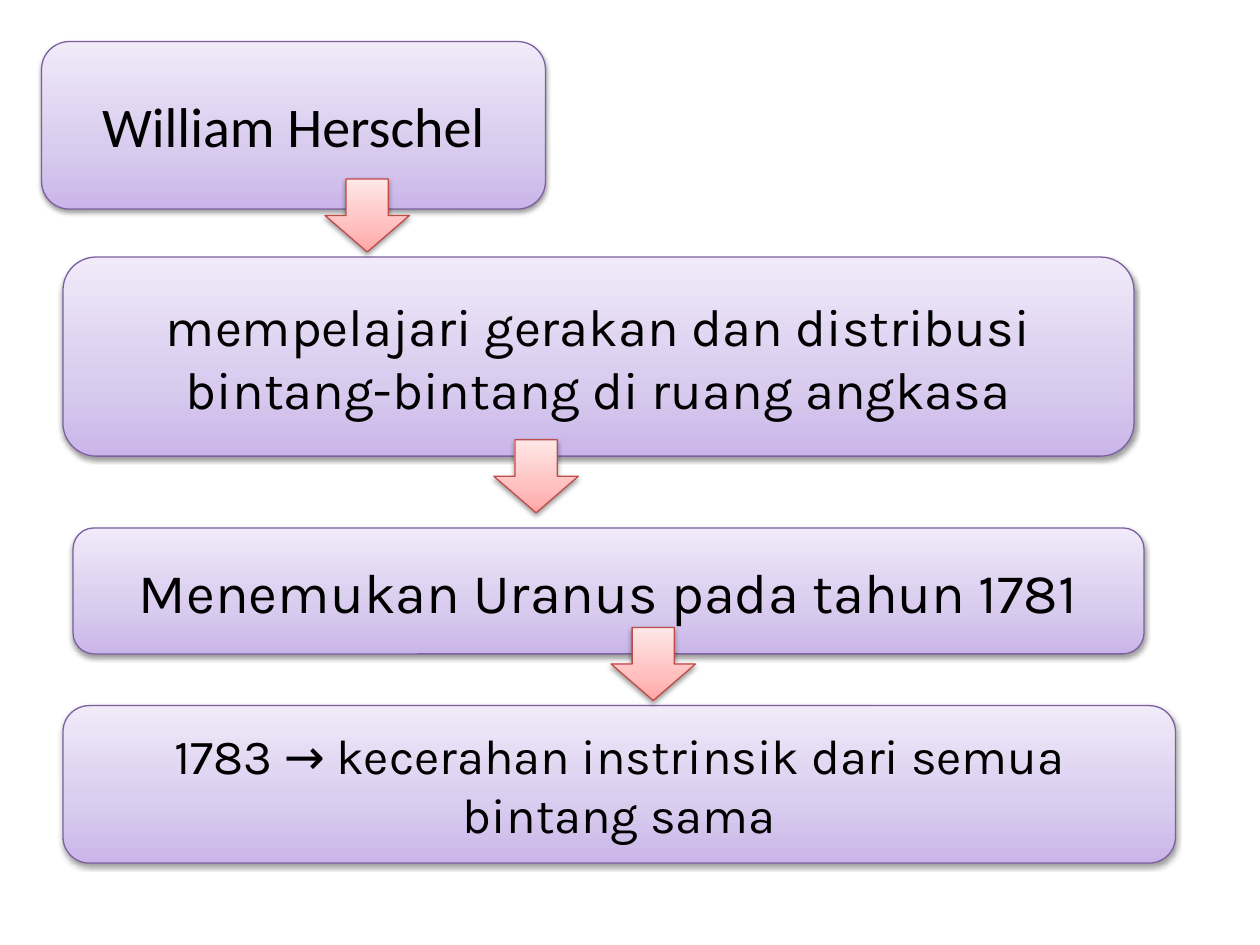
from copy import deepcopy

from lxml import etree
from pptx import Presentation
from pptx.dml.color import RGBColor
from pptx.enum.shapes import MSO_SHAPE
from pptx.enum.text import MSO_ANCHOR, PP_ALIGN
from pptx.oxml.ns import qn
from pptx.util import Inches, Pt

ROUND, ARROW = MSO_SHAPE.ROUNDED_RECTANGLE, MSO_SHAPE.DOWN_ARROW
MIDDLE, CENTER = MSO_ANCHOR.MIDDLE, PP_ALIGN.CENTER
STOPS = (0, 0.35, 1)
PURPLE = {"fill": ("C9B5E8", "D8CBEE", "F0EAF9"), "line": "7D60A0"}
RED = {"fill": ("FFA6A5", "FFC0BF", "FFE7E7"), "line": "BF4C48"}
STEPS = [
    ((0.33, 0.33, 4, 1.33), "William Herschel", "Calibri", 32),
    ((0.5, 2.04, 8.5, 1.58),
     "mempelajari gerakan dan distribusi bintang-bintang di ruang angkasa", "Karla", 30),
    ((0.58, 4.19, 8.5, 1), "Menemukan Uranus pada tahun 1781", "Karla", 32),
    ((0.5, 5.6, 8.83, 1.25),
     "1783 → kecerahan instrinsik dari semua bintang sama", "Karla", 28),
]
ARROWS = [(2.58, 1.42), (3.92, 3.49), (4.85, 4.98)]


def color(code):
    """Turn a hex string into a colour."""
    return RGBColor.from_string(code)


def shade(shape, codes):
    """Fill a shape with a three-stop gradient that rises from its foot."""
    fill = shape.fill
    fill.gradient()
    fill.gradient_angle = 90
    stops = shape._element.spPr.find(qn("a:gradFill")).find(qn("a:gsLst"))
    stops.insert(1, deepcopy(stops[0]))
    for stop, place, code in zip(fill.gradient_stops, STOPS, codes):
        stop.position = place
        stop.color.rgb = color(code)


def drop(shape):
    """Give a shape a soft shadow below it."""
    shape.shadow.inherit = False
    effects = shape._element.spPr.find(qn("a:effectLst"))
    outer = etree.SubElement(
        effects, qn("a:outerShdw"), blurRad=str(Pt(3.1)), dist=str(Pt(1.6)),
        dir="5400000", rotWithShape="0")
    black = etree.SubElement(outer, qn("a:srgbClr"), val="000000")
    etree.SubElement(black, qn("a:alpha"), val="38000")


def block(slide, kind, box, look):
    """Place a shaded shape in a box."""
    shape = slide.shapes.add_shape(kind, *map(Inches, box))
    shade(shape, look["fill"])
    shape.line.color.rgb = color(look["line"])
    shape.line.width = Pt(0.75)
    drop(shape)
    return shape


def step(slide, box, text, face, size):
    """Place one step of the story with its centred text."""
    frame = block(slide, ROUND, box, PURPLE).text_frame
    frame.word_wrap = True
    frame.vertical_anchor = MIDDLE
    para = frame.paragraphs[0]
    para.alignment = CENTER
    run = para.add_run()
    run.text = text
    for name, value in {"name": face, "size": Pt(size)}.items():
        setattr(run.font, name, value)
    run.font.color.rgb = color("000000")


def main():
    """Build the slide and save it."""
    deck = Presentation()
    deck.slide_width, deck.slide_height = Inches(10), Inches(7.5)
    slide = deck.slides.add_slide(deck.slide_layouts[6])
    for item in STEPS:
        step(slide, *item)
    for left, top in ARROWS:
        block(slide, ARROW, (left, top, 0.67, 0.58), RED)
    deck.save("out.pptx")


if __name__ == "__main__":
    main()
